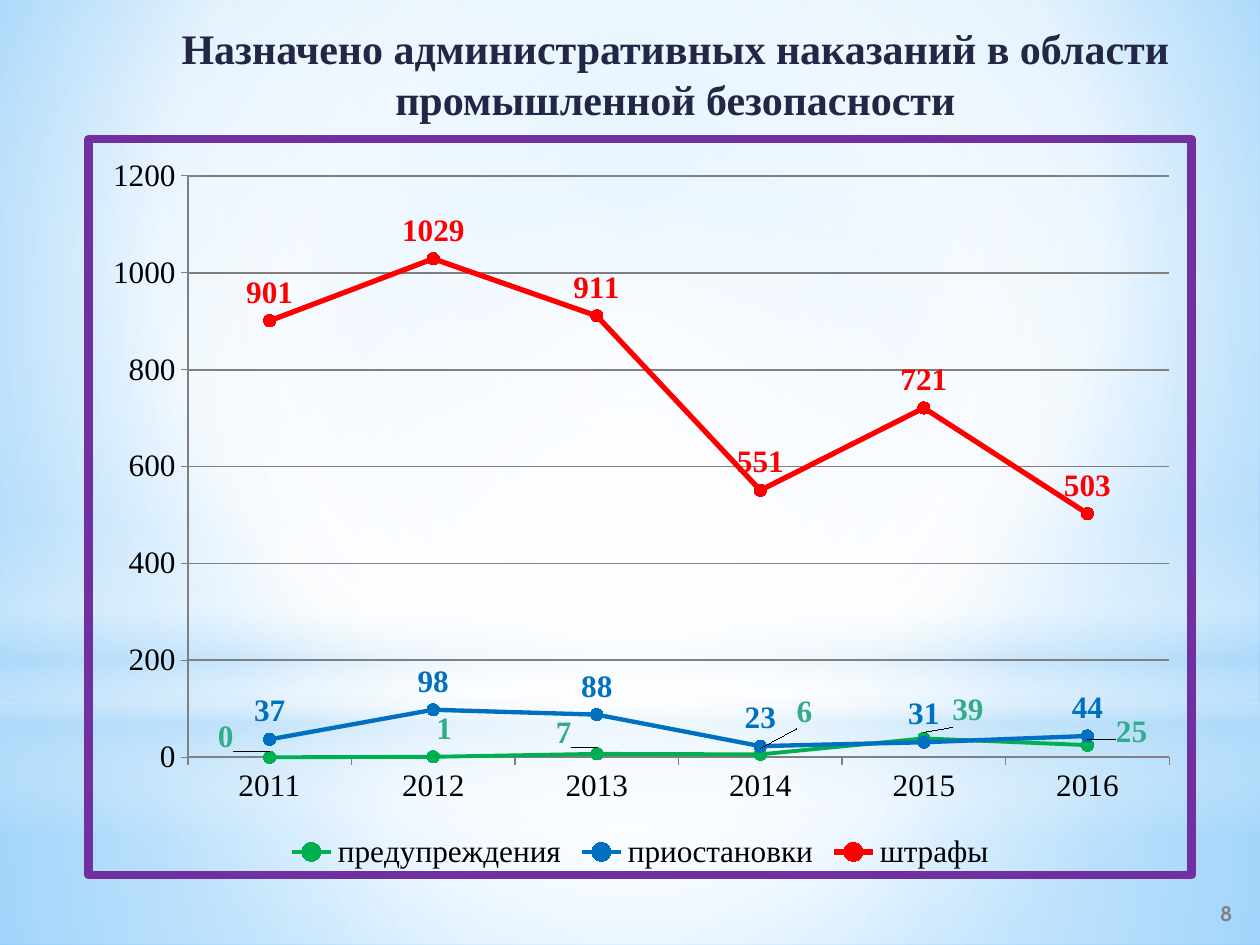
"""Builds the slide with the line chart of administrative penalties."""
from dataclasses import dataclass

from lxml.etree import SubElement
from pptx import Presentation
from pptx.chart.data import CategoryChartData
from pptx.dml.color import RGBColor
from pptx.enum.chart import XL_CHART_TYPE as ChartType, XL_LABEL_POSITION as LabelPosition
from pptx.enum.chart import XL_LEGEND_POSITION as LegendPosition, XL_MARKER_STYLE as MarkerStyle
from pptx.enum.chart import XL_TICK_MARK as TickMark
from pptx.enum.shapes import MSO_SHAPE as Preset
from pptx.enum.text import MSO_ANCHOR as Anchor, MSO_AUTO_SIZE as AutoSize, PP_ALIGN as Align
from pptx.oxml import parse_xml
from pptx.oxml.ns import nsdecls, qn
from pptx.slide import Slide
from pptx.util import Inches, Pt

NAVY = RGBColor(0x21, 0x27, 0x45)
PURPLE = RGBColor(0x70, 0x30, 0xA0)
GREEN = RGBColor(0x00, 0xB0, 0x50)
TEAL = RGBColor(0x34, 0xAC, 0x8B)
BLUE = RGBColor(0x00, 0x70, 0xC0)
RED = RGBColor(0xFF, 0x00, 0x00)
BLACK = RGBColor(0x00, 0x00, 0x00)
GREY = RGBColor(0x80, 0x80, 0x80)
WHITE = RGBColor(0xFF, 0xFF, 0xFF)
SKY = RGBColor(0xB4, 0xDC, 0xFA)
LIGHT_BLUE = RGBColor(0x9E, 0xD5, 0xFF)
DEEP_BLUE = RGBColor(0x5B, 0xB9, 0xFF)

CENTRE = (50, 50, 50, 50)
YEARS = ["2011", "2012", "2013", "2014", "2015", "2016"]
SERIES = [
    ("предупреждения", (0, 1, 7, 6, 39, 25), GREEN, TEAL, 2.25),
    ("приостановки", (37, 98, 88, 23, 31, 44), BLUE, BLUE, 2.5),
    ("штрафы", (901, 1029, 911, 551, 721, 503), RED, RED, 3),
]
WARNING_SHIFTS = [(-0.04, 0.01), (0.01, 0), (-0.03, 0.01), (0.04, -0.02), (0.04, 0), (0.04, 0.02)]


def set_font(font, size, color, name, bold=False):
    """Format a font."""
    font.size, font.name, font.bold = Pt(size), name, bold
    font.color.rgb = color


def write(frame, text, align=Align.LEFT, anchor=Anchor.TOP, **font):
    """Write one formatted paragraph into a text frame."""
    frame.word_wrap = True
    frame.auto_size = AutoSize.NONE
    frame.vertical_anchor = anchor
    para = frame.paragraphs[0]
    para.alignment = align
    span = para.add_run()
    span.text = text
    set_font(span.font, **font)


def paint_gradient(fill, element, stops, focus=None):
    """Fill with (position, colour, opacity) stops, radial around focus or downwards."""
    fill.gradient()
    gradient = parse_xml(f'<a:gradFill {nsdecls("a")} rotWithShape="1"/>')
    stop_list = SubElement(gradient, qn("a:gsLst"))
    for position, color, opacity in stops:
        stop = SubElement(stop_list, qn("a:gs"), pos=str(position * 1000))
        tint = SubElement(stop, qn("a:srgbClr"), val=str(color))
        SubElement(tint, qn("a:alpha"), val=str(opacity * 1000))
    if focus:
        path = SubElement(gradient, qn("a:path"), path="circle")
        sides = {side: str(part * 1000) for side, part in zip("ltrb", focus)}
        SubElement(path, qn("a:fillToRect"), **sides)
    else:
        SubElement(gradient, qn("a:lin"), ang="5400000", scaled="0")
    current = next(element.iter(qn("a:gradFill")))
    current.getparent().replace(current, gradient)


def set_layout(parent, index, **values):
    """Give a chart part a manual layout in fractions of the chart."""
    for old in parent.findall(qn("c:layout")):
        parent.remove(old)
    layout = parse_xml(f'<c:layout {nsdecls("c")}/>')
    manual = SubElement(layout, qn("c:manualLayout"))
    for tag, value in values.items():
        SubElement(manual, qn(f"c:{tag}"), val=str(value))
    parent.insert(index, layout)


@dataclass
class Painter:
    """Holds the style and the current slide."""
    page: Slide
    font: str = "Times New Roman"
    number_font: str = "Cabin"

    def background(self, stops, focus):
        """Paint the slide background."""
        paint_gradient(self.page.background.fill, self.page.element, stops, focus)

    def glow(self, preset, left, top, width, height, stops, focus=None):
        """Add a translucent gradient shape."""
        shape = self.page.shapes.add_shape(
            preset, Inches(left), Inches(top), Inches(width), Inches(height))
        shape.shadow.inherit = False
        shape.line.fill.background()
        paint_gradient(shape.fill, shape.element, stops, focus)

    def title(self, text, left, top, width, height):
        """Place the title in front of the glows."""
        box = self.page.shapes.title
        box.left, box.top, box.width, box.height = map(Inches, (left, top, width, height))
        write(box.text_frame, text, Align.CENTER, size=24, color=NAVY, name=self.font, bold=True)
        box.element.getparent().append(box.element)

    def page_number(self, text, left, top, width, height):
        """Add the page number."""
        box = self.page.shapes.add_textbox(
            Inches(left), Inches(top), Inches(width), Inches(height))
        write(box.text_frame, text, Align.RIGHT, Anchor.MIDDLE,
              size=12, color=GREY, name=self.number_font, bold=True)

    def line_chart(self, left, top, width, height):
        """Add the framed line chart."""
        data = CategoryChartData()
        data.categories = YEARS
        for name, values, *_ in SERIES:
            data.add_series(name, values)
        chart = self.page.shapes.add_chart(
            ChartType.LINE_MARKERS, Inches(left), Inches(top),
            Inches(width), Inches(height), data).chart
        set_font(chart.font, 18, BLACK, self.font)
        chart.has_title = False
        chart.has_legend = True
        chart.legend.position = LegendPosition.BOTTOM
        chart.legend.include_in_layout = False
        self.axes(chart)
        chart.plots[0].vary_by_categories = False
        for series, (_, _, color, label_color, weight) in zip(chart.plots[0].series, SERIES):
            self.series(series, color, label_color, weight)
        self.shift_labels(chart)
        self.frame(chart)

    def axes(self, chart):
        """Format both axes and the gridlines."""
        scale = chart.value_axis
        scale.minimum_scale, scale.maximum_scale, scale.major_unit = 0, 1200, 200
        scale.has_major_gridlines = True
        for axis in (chart.category_axis, scale):
            axis.major_tick_mark = TickMark.OUTSIDE
            axis.format.line.color.rgb = GREY
            axis.format.line.width = Pt(0.75)
        scale.major_gridlines.format.line.color.rgb = GREY
        scale.major_gridlines.format.line.width = Pt(1)

    def series(self, series, color, label_color, weight):
        """Format a line with its markers and labels."""
        series.smooth = False
        series.format.line.color.rgb = color
        series.format.line.width = Pt(weight)
        series.marker.style, series.marker.size = MarkerStyle.CIRCLE, 7
        series.marker.format.fill.solid()
        series.marker.format.fill.fore_color.rgb = color
        series.marker.format.line.color.rgb = color
        labels = series.data_labels
        labels.show_value = True
        labels.position = LabelPosition.ABOVE
        set_font(labels.font, 18, label_color, self.font, bold=True)

    def shift_labels(self, chart):
        """Move the labels of the warnings off the other line."""
        warnings = chart.plots[0].series[0]
        for index in range(len(YEARS)):
            label = warnings.points[index].data_label
            set_font(label.font, 18, TEAL, self.font, bold=True)
            label.position = LabelPosition.ABOVE
        for element, (x, y) in zip(chart.element.iter(qn("c:dLbl")), WARNING_SHIFTS):
            set_layout(element, 1, x=x, y=y)

    def frame(self, chart):
        """Set the plot area and the border of the chart."""
        set_layout(next(chart.element.iter(qn("c:plotArea"))), 0, layoutTarget="inner",
                   xMode="edge", yMode="edge", x=0.09, y=0.05, w=0.89, h=0.79)
        chart.element.find(qn("c:chart")).addnext(parse_xml(
            f'<c:spPr {nsdecls("c", "a")}><a:noFill/><a:ln w="{Pt(5)}"><a:solidFill>'
            f'<a:srgbClr val="{PURPLE}"/></a:solidFill><a:round/></a:ln></c:spPr>'))


def main():
    """Build and save the deck."""
    deck = Presentation()
    deck.slide_width, deck.slide_height = Inches(10), Inches(7.5)
    painter = Painter(deck.slides.add_slide(deck.slide_layouts[5]))
    painter.background([(0, LIGHT_BLUE, 100), (60, WHITE, 100), (100, DEEP_BLUE, 100)],
                       (20, 10, 20, 60))
    painter.glow(Preset.RECTANGLE, 0, 5.58, 10, 1.92,
                 [(0, WHITE, 91), (37, WHITE, 76), (100, SKY, 79)], CENTRE)
    painter.glow(Preset.RECTANGLE, 0, 0, 10, 5.58,
                 [(0, WHITE, 89), (48, WHITE, 62), (100, SKY, 79)], CENTRE)
    painter.glow(Preset.RECTANGLE, 0, 4.12, 10, 2.5,
                 [(0, WHITE, 0), (29, WHITE, 30), (45, SKY, 40),
                  (55, WHITE, 26), (65, SKY, 60), (100, WHITE, 0)])
    painter.glow(Preset.OVAL, 0, 1.75, 10, 5.58, [(0, WHITE, 100), (56, WHITE, 0)], CENTRE)
    painter.title("Назначено административных наказаний в области промышленной безопасности",
                  0.91, 0.13, 8.9, 0.71)
    painter.line_chart(0.67, 1.07, 8.82, 5.91)
    painter.page_number("8", 7.88, 7.05, 2, 0.4)
    deck.save("out.pptx")


if __name__ == "__main__":
    main()
